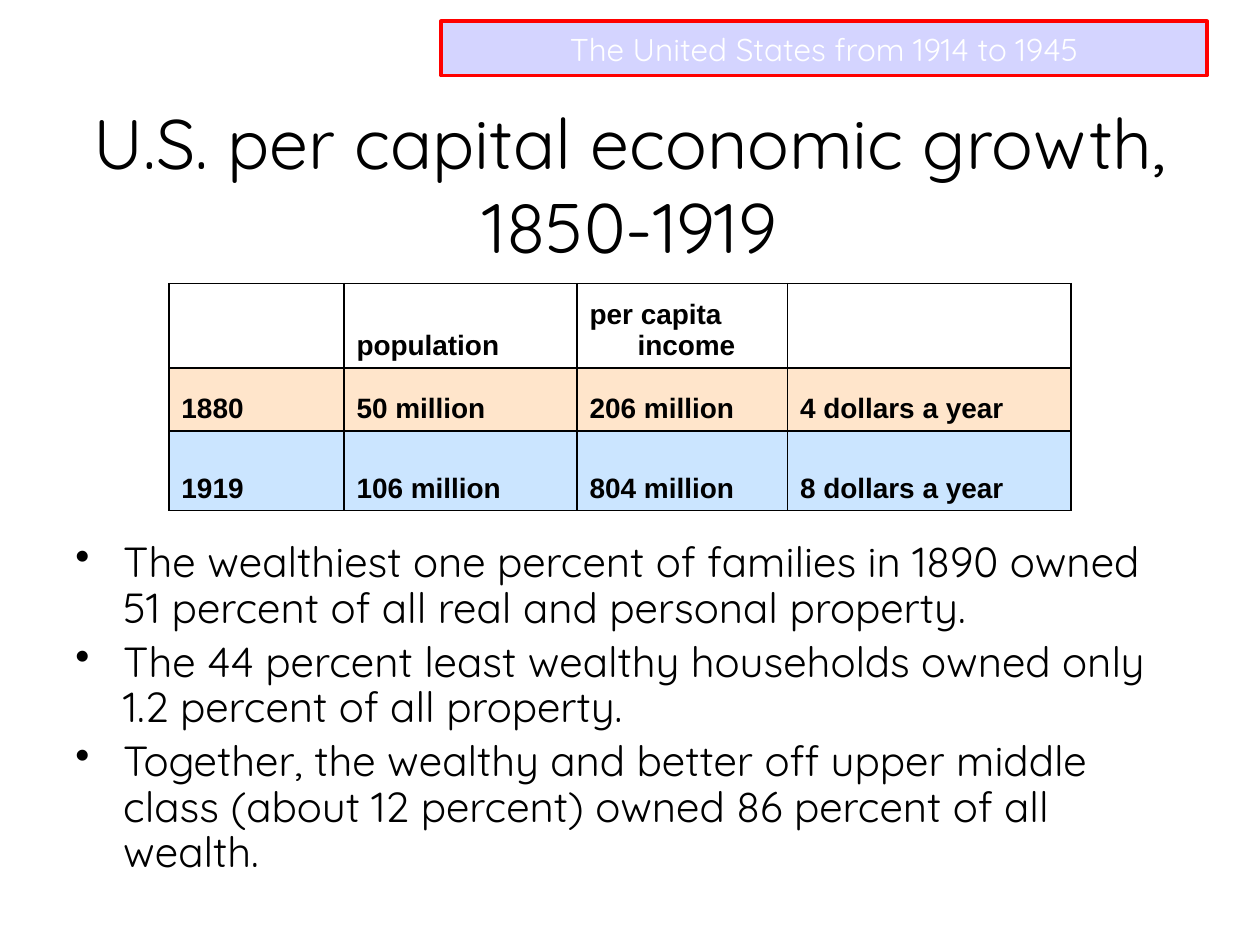
import pptx
import pptx.util
import pptx.dml.color
import pptx.enum.shapes
import pptx.enum.text
import pptx.oxml
import pptx.oxml.ns
from pptx.util import Inches

RGBColor = pptx.dml.color.RGBColor
BLACK = RGBColor(0x00, 0x00, 0x00)
WHITE = RGBColor(0xFF, 0xFF, 0xFF)
RED = RGBColor(0xFF, 0x00, 0x00)
BLUE = RGBColor(0x00, 0x00, 0xFF)
PEACH = RGBColor(0xFF, 0xCC, 0x99)
SKY = RGBColor(0x99, 0xCC, 0xFF)

CENTER = pptx.enum.text.PP_ALIGN.CENTER
ANCHOR = pptx.enum.text.MSO_ANCHOR
NAMESPACE = pptx.oxml.ns.nsdecls("a")


class SlideBuilder:
    """Holds the style and the current slide."""

    text_font = "Quicksand"
    table_font = "Arial"
    indent = Inches(0.38)

    def __init__(self, slide):
        self.slide = slide

    def add_run(self, paragraph, text, size, color=BLACK, font=text_font, bold=False):
        run = paragraph.add_run()
        run.text = text
        run.font.name = font
        run.font.size = pptx.util.Pt(size)
        run.font.bold = bold
        run.font.color.rgb = color

    def set_fill(self, fill, color, opacity):
        fill.solid()
        fill.fore_color.rgb = color
        color_element = fill._xPr.find(".//" + pptx.oxml.ns.qn("a:srgbClr"))
        color_element.append(pptx.oxml.parse_xml(
            f'<a:alpha {NAMESPACE} val="{opacity * 1000}"/>'))

    def set_hanging_indent(self, paragraph):
        properties = paragraph._p.get_or_add_pPr()
        properties.set("marL", str(self.indent))
        properties.set("indent", str(-self.indent))
        return properties

    def add_banner(self, text, left, top, width, height):
        shape = self.slide.shapes.add_shape(
            pptx.enum.shapes.MSO_SHAPE.RECTANGLE, left, top, width, height)
        shape.shadow.inherit = False
        self.set_fill(shape.fill, BLUE, 17)
        shape.line.color.rgb = RED
        shape.line.width = pptx.util.Pt(2.25)
        shape.text_frame.word_wrap = True
        paragraph = shape.text_frame.paragraphs[0]
        paragraph.alignment = CENTER
        self.add_run(paragraph, text, 18, WHITE)

    def add_text_frame(self, left, top, width, height, anchor):
        frame = self.slide.shapes.add_textbox(left, top, width, height).text_frame
        frame.word_wrap = True
        frame.vertical_anchor = anchor
        return frame

    def add_title(self, text, left, top, width, height):
        frame = self.add_text_frame(left, top, width, height, ANCHOR.MIDDLE)
        paragraph = frame.paragraphs[0]
        paragraph.alignment = CENTER
        self.add_run(paragraph, text, 40)

    def add_bullets(self, items, left, top, width, height):
        frame = self.add_text_frame(left, top, width, height, ANCHOR.TOP)
        for index, item in enumerate(items):
            paragraph = frame.add_paragraph() if index else frame.paragraphs[0]
            properties = self.set_hanging_indent(paragraph)
            properties.append(pptx.oxml.parse_xml(f'<a:buChar {NAMESPACE} char="•"/>'))
            paragraph.line_spacing = 0.9
            if index:
                paragraph.space_before = pptx.util.Pt(5)
            self.add_run(paragraph, item, 24)

    def add_borders(self, cell):
        properties = cell._tc.get_or_add_tcPr()
        for index, side in enumerate("LRTB"):
            properties.insert(index, pptx.oxml.parse_xml(
                f'<a:ln{side} {NAMESPACE} w="{pptx.util.Pt(1)}"><a:solidFill>'
                f'<a:srgbClr val="{BLACK}"/></a:solidFill></a:ln{side}>'))

    def add_table(self, rows, fills, left, top, widths, heights):
        table = self.slide.shapes.add_table(
            len(rows), len(widths), left, top,
            Inches(sum(widths)), Inches(sum(heights))).table
        table.first_row = table.horz_banding = False
        for column, width in zip(table.columns, widths):
            column.width = Inches(width)
        for row, height, texts, color in zip(table.rows, heights, rows, fills):
            row.height = Inches(height)
            for cell, text in zip(row.cells, texts):
                if color is None:
                    cell.fill.background()
                else:
                    self.set_fill(cell.fill, color, 50)
                self.add_borders(cell)
                cell.vertical_anchor = ANCHOR.BOTTOM
                if text:
                    paragraph = cell.text_frame.paragraphs[0]
                    self.set_hanging_indent(paragraph)
                    self.add_run(paragraph, text, 16, font=self.table_font, bold=True)


def main():
    presentation = pptx.Presentation()
    presentation.slide_width = Inches(10)
    presentation.slide_height = Inches(7.5)
    builder = SlideBuilder(presentation.slides.add_slide(presentation.slide_layouts[6]))

    # Course banner
    builder.add_banner("The United States from 1914 to 1945",
                       Inches(3.5), Inches(0.17), Inches(6.08), Inches(0.43))

    # Growth table
    builder.add_table(
        [("", "population", "per capita income", ""),
         ("1880", "50 million", "206 million", "4 dollars a year"),
         ("1919", "106 million", "804 million", "8 dollars a year")],
        [None, PEACH, SKY],
        Inches(1.34), Inches(2.25),
        widths=(1.39, 1.85, 1.67, 2.25), heights=(0.67, 0.5, 0.63))

    # Title
    builder.add_title("U.S. per capital economic growth, 1850-1919",
                      Inches(0.5), Inches(0.83), Inches(9), Inches(1.25))

    # Wealth distribution
    builder.add_bullets(
        ["The wealthiest one percent of families in 1890 owned 51 percent of all "
         "real and personal property.",
         "The 44 percent least wealthy households owned only 1.2 percent of all property.",
         "Together, the wealthy and better off upper middle class (about 12 percent) "
         "owned 86 percent of all wealth."],
        Inches(0.5), Inches(4.25), Inches(9), Inches(2.83))

    presentation.save("out.pptx")


if __name__ == "__main__":
    main()
